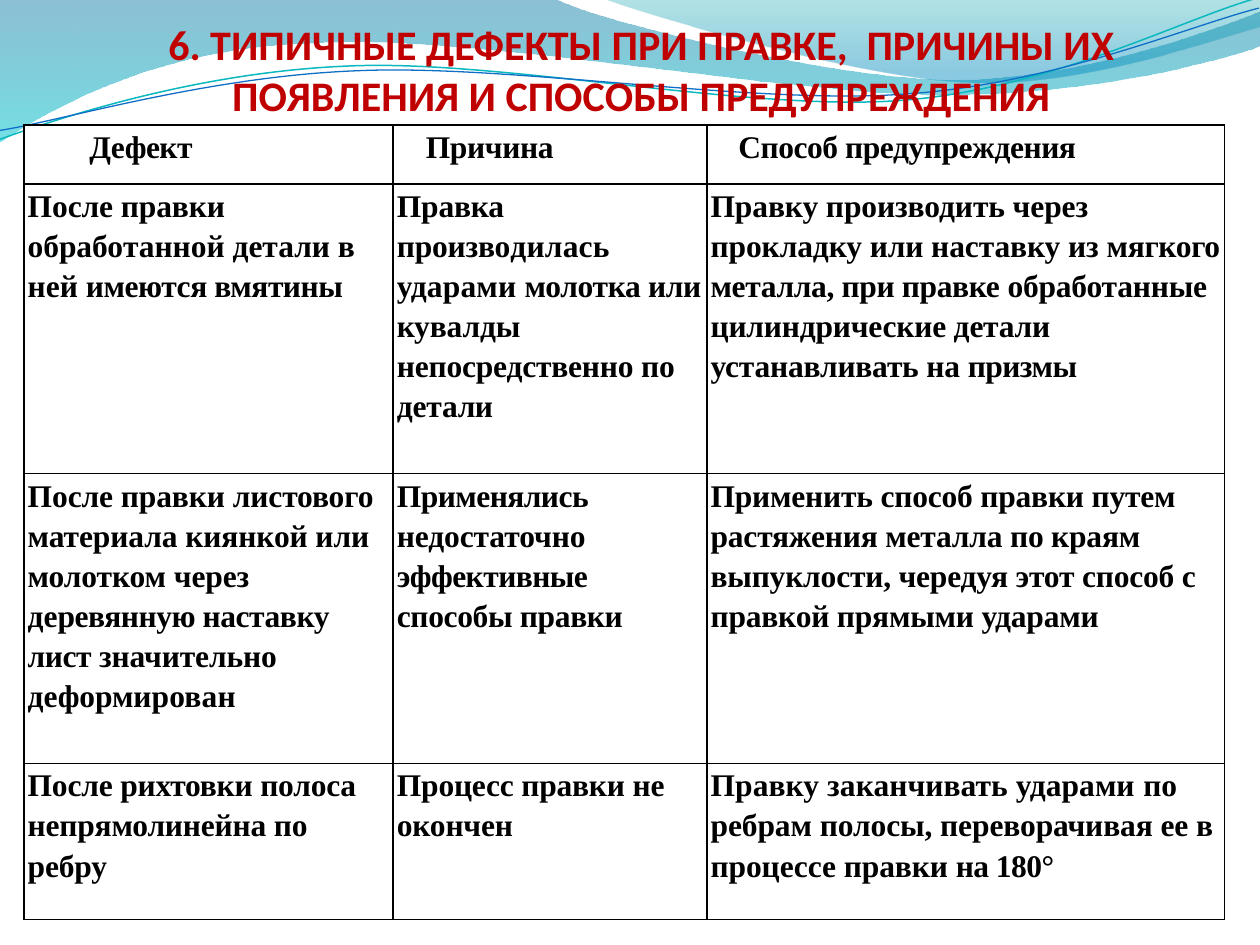
from lxml import etree
from pptx import Presentation
from pptx.dml.color import RGBColor
from pptx.enum.text import MSO_ANCHOR, PP_ALIGN
from pptx.oxml.ns import qn
from pptx.util import Pt

PX = 9144  # EMU in one px, 100 px to the inch
CENTER = PP_ALIGN.CENTER
BOTTOM = MSO_ANCHOR.BOTTOM

BLACK = RGBColor(0x00, 0x00, 0x00)
WHITE = RGBColor(0xFF, 0xFF, 0xFF)
RED = RGBColor(0xC0, 0x00, 0x00)
DEEP_BLUE = RGBColor(0x00, 0x74, 0xA1)
CYAN = RGBColor(0x00, 0xC6, 0xCF)
TEAL = RGBColor(0x00, 0xA1, 0xA9)
SKY = RGBColor(0x00, 0x8B, 0xBF)
LINE_TEAL = RGBColor(0x0A, 0xB8, 0xBF)
LINE_BLUE = RGBColor(0x0F, 0x6F, 0xC6)

LINE_TILT = -2.7

# Outlines: a pair is a straight step, six numbers are a Bezier curve.
LEFT_WAVE = [
    (0, 0), (440, -1), (476, 17, 664, 63, 758, 63), (853, 63, 958, 26, 1000, 9),
    (1001, 36), (983, 44, 870, 76, 746, 75), (622, 75, 382, 28, 257, 34),
    (129, 36, 46, 83, -1, 113), (0, 0),
]
RIGHT_WAVE = [
    (479, -1), (509, 11, 682, 62, 769, 65), (856, 69, 961, 32, 1000, 21),
    (1000, 0), (479, -1),
]
TEAL_LINE = [
    (-2, 87), (47, 72, 158, 41, 277, 42), (396, 42, 591, 93, 712, 90),
    (832, 87, 939, 36, 1000, 22),
]
BLUE_LINE = [
    (-2, 80), (46, 75, 164, 45, 283, 46), (403, 46, 596, 88, 716, 85),
    (835, 83, 943, 42, 1001, 30),
]

TITLE = "6. ТИПИЧНЫЕ ДЕФЕКТЫ ПРИ ПРАВКЕ,  ПРИЧИНЫ ИХ ПОЯВЛЕНИЯ И СПОСОБЫ ПРЕДУПРЕЖДЕНИЯ"

COLUMN_WIDTHS = (293, 249, 411)
ROW_HEIGHTS = (47, 230, 230, 124)
HEADER_INDENTS = (49, 23, 22)

# Each cell is a list of (text, letter spacing in hundredths of a point).
ROWS = [
    [
        [("Дефект", -30)],
        [("Причина", -20)],
        [("Способ предупреждения", -25)],
    ],
    [
        [("После правки обрабо", -5), ("танной детали в ней ", 0),
         ("имеются вмятины", -25)],
        [("Правка произво", -10), ("дилась ударами ", 10), ("молотка или ку", -20),
         ("валды непосредственно по дета", -10), ("ли", -30)],
        [("Правку производить через прокладку или наставку из ", -5),
         ("мягкого металла, при правке ", -20),
         ("обработанные цилиндрические детали устанавливать на ", -10),
         ("призмы", -30)],
    ],
    [
        [("После правки листового материала киянкой или молотком через де", -5),
         ("ревянную наставку лист ", -25), ("значительно деформи", -5),
         ("рован", 10)],
        [("Применялись ", -30), ("недостаточно ", -5), ("эффективные ", -30),
         ("способы правки", -20)],
        [("Применить способ правки путем растяжения металла по краям выпуклости, "
          "чередуя этот способ с правкой прямыми ударами", -12)],
    ],
    [
        [("После рихтовки полоса непрямолинейна по ребру", -10)],
        [("Процесс правки не окончен", -10)],
        [("Правку заканчивать ударами ", 5),
         ("по ребрам полосы, переворачивая ее в процессе правки ", -5),
         ("на 180°", -30)],
    ],
]


def px(*lengths):
    return [length * PX for length in lengths]


def add_outline(page, outline):
    """Build a freeform, joining each three points of a curve into a Bezier."""
    builder = page.shapes.build_freeform(*outline[0], scale=PX)
    for step in outline[1:]:
        builder.add_line_segments(list(zip(step[::2], step[1::2])), close=False)
    shape = builder.convert_to_shape()
    shape.shadow.inherit = False
    segments = iter(list(shape.element.spPr.iter(qn("a:lnTo"))))
    for step in outline[1:]:
        if len(step) == 6:
            curve, *others = [next(segments) for _ in range(3)]
            bezier = etree.Element(qn("a:cubicBezTo"))
            curve.addprevious(bezier)
            for segment in (curve, *others):
                bezier.append(segment[0])
                segment.getparent().remove(segment)
        else:
            next(segments)
    return shape


def add_wave(page, outline, stops):
    """Add a see-through wave; stops hold (position, colour, opacity %)."""
    wave = add_outline(page, outline)
    wave.line.fill.background()
    wave.fill.gradient()
    wave.fill.gradient_angle = 270
    for stop, (position, color, _) in zip(wave.fill.gradient_stops, stops):
        stop.position = position
        stop.color.rgb = color
    colors = wave.element.spPr.iter(qn("a:srgbClr"))
    for color, (_, _, opacity) in zip(colors, stops):
        etree.SubElement(color, qn("a:alpha")).set("val", str(opacity * 1000))


def add_wave_line(page, outline, color, width):
    curve = add_outline(page, outline)
    curve.rotation = LINE_TILT
    curve.fill.background()
    curve.line.color.rgb = color
    curve.line.width = Pt(width)


def add_background(page):
    add_wave(page, LEFT_WAVE, [(0, DEEP_BLUE, 45), (1, CYAN, 55)])
    add_wave(page, RIGHT_WAVE, [(0, TEAL, 30), (0.8, SKY, 45)])
    add_wave_line(page, TEAL_LINE, LINE_TEAL, 0.85)
    add_wave_line(page, BLUE_LINE, LINE_BLUE, 0.75)


def add_span(para, text, font_name, size, color):
    span = para.add_run()
    span.text = text
    span.font.name = font_name
    span.font.size = Pt(size)
    span.font.bold = True
    span.font.color.rgb = color
    return span


def add_title(page, left, top, width, height):
    box = page.shapes.add_textbox(*px(left, top, width, height))
    frame = box.text_frame
    frame.word_wrap = True
    frame.vertical_anchor = BOTTOM
    frame.margin_left, frame.margin_top, frame.margin_right, frame.margin_bottom = px(0, 5, 0, 1)
    para = frame.paragraphs[0]
    para.alignment = CENTER
    add_span(para, TITLE, "Calibri", 24, RED)


def add_borders(cell):
    properties = cell._tc.get_or_add_tcPr()
    for side in ("lnL", "lnR", "lnT", "lnB"):
        border = etree.SubElement(properties, qn("a:" + side), w=str(Pt(1)))
        fill = etree.SubElement(border, qn("a:solidFill"))
        etree.SubElement(fill, qn("a:srgbClr"), val=str(BLACK))


def fill_cell(cell, spans, indent):
    add_borders(cell)
    cell.fill.solid()
    cell.fill.fore_color.rgb = WHITE
    cell.margin_left, cell.margin_top, cell.margin_right, cell.margin_bottom = px(3, 0, 3, 0)
    para = cell.text_frame.paragraphs[0]
    para.line_spacing = 1.15
    if indent:
        para._p.get_or_add_pPr().set("marL", str(indent * PX))
    for text, spacing in spans:
        span = add_span(para, text, "Times New Roman", 18, BLACK)
        span._r.get_or_add_rPr().set("spc", str(spacing))


def add_defect_table(page, left, top):
    size = px(left, top, sum(COLUMN_WIDTHS), sum(ROW_HEIGHTS))
    table = page.shapes.add_table(len(ROWS), len(COLUMN_WIDTHS), *size).table
    for column, width in zip(table.columns, px(*COLUMN_WIDTHS)):
        column.width = width
    for row, height in zip(table.rows, px(*ROW_HEIGHTS)):
        row.height = height
    for r, row in enumerate(ROWS):
        for c, spans in enumerate(row):
            fill_cell(table.cell(r, c), spans, HEADER_INDENTS[c] if r == 0 else 0)


def main():
    deck = Presentation()
    deck.slide_width, deck.slide_height = px(1000, 750)
    page = deck.slides.add_slide(deck.slide_layouts[6])
    add_background(page)
    add_title(page, 59, 21, 900, 75)
    add_defect_table(page, 19, 99)
    deck.save("out.pptx")


if __name__ == "__main__":
    main()
